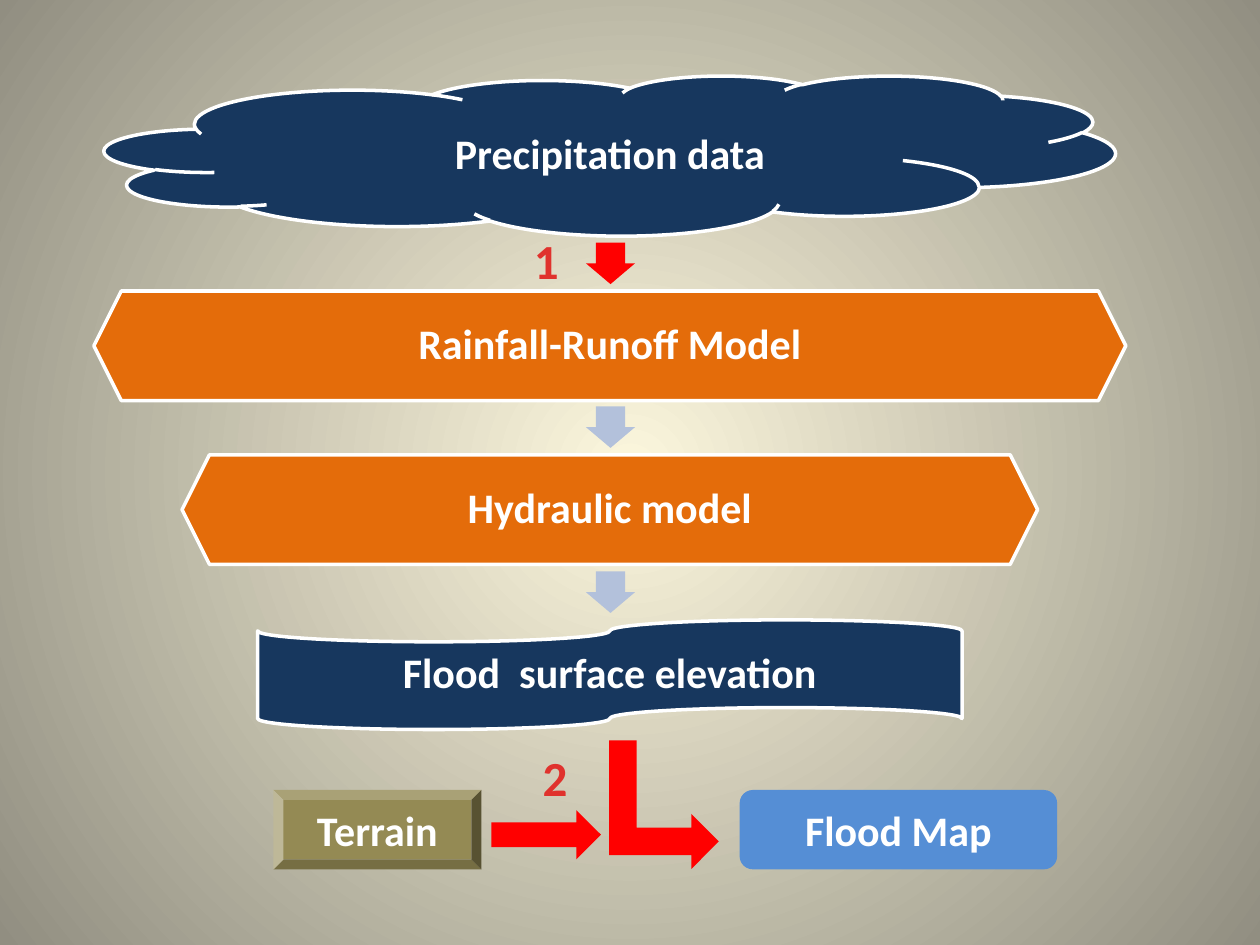
from lxml.etree import SubElement
from pptx import Presentation
from pptx.dml.color import RGBColor
from pptx.enum.shapes import MSO_SHAPE
from pptx.enum.text import MSO_ANCHOR, MSO_AUTO_SIZE, PP_ALIGN
from pptx.oxml.ns import qn
from pptx.util import Inches, Pt

NAVY, ORANGE, RED, PALE, WHITE = "17375E", "E46C0A", "FF0000", "B3C1DB", "FFFFFF"
CENTER_X = 4.84
STEP_HEIGHT = 0.87

# text, shape, top, width, height, fill, colour of the arrow leading in
STEPS = [
    ("Precipitation data", MSO_SHAPE.CLOUD, 0.6, 8.02, 1.27, NAVY, None),
    ("Rainfall-Runoff Model", MSO_SHAPE.HEXAGON, 2.31, 8.19, STEP_HEIGHT, ORANGE, RED),
    ("Hydraulic model", MSO_SHAPE.HEXAGON, 3.61, 6.79, STEP_HEIGHT, ORANGE, PALE),
    ("Flood  surface elevation", MSO_SHAPE.FLOWCHART_PUNCHED_TAPE, 4.92, 5.59,
     STEP_HEIGHT, NAVY, PALE),
]


def rgb(value):
    return RGBColor.from_string(value)


def set_gradient(fill, stops):
    fill.gradient()
    for stop, (position, color) in zip(fill.gradient_stops, stops):
        stop.position = position
        stop.color.rgb = rgb(color)


def set_background(slide, inner, outer):
    set_gradient(slide.background.fill, [(0, inner), (1, outer)])
    grad = slide.element.find(".//" + qn("a:gradFill"))
    grad.remove(grad.find(qn("a:lin")))
    circle = SubElement(grad, qn("a:path"), path="circle")
    SubElement(circle, qn("a:fillToRect"), l="50000", t="50000", r="50000", b="50000")


def set_text(sp, text, size=24, color=WHITE, line_spacing=None, inset=None):
    tf = sp.text_frame
    tf.word_wrap = True
    tf.vertical_anchor = MSO_ANCHOR.MIDDLE
    if inset is not None:
        tf.margin_left = tf.margin_right = Inches(inset)
        tf.margin_top = tf.margin_bottom = Inches(inset)
    p = tf.paragraphs[0]
    p.alignment = PP_ALIGN.CENTER
    p.line_spacing = line_spacing
    r = p.add_run()
    r.text = text
    r.font.name, r.font.size, r.font.bold = "Calibri", Pt(size), True
    r.font.color.rgb = rgb(color)
    return r


def add_box(slide, kind, left, top, width, height, fill, line=None, rotation=0):
    sp = slide.shapes.add_shape(kind, Inches(left), Inches(top),
                                Inches(width), Inches(height))
    sp.shadow.inherit = False
    sp.rotation = rotation
    sp.fill.solid()
    sp.fill.fore_color.rgb = rgb(fill)
    if line:
        sp.line.color.rgb = rgb(line)
        sp.line.width = Pt(2)
    else:
        sp.line.fill.background()
    return sp


def add_textbox(slide, left, top, width, height):
    return slide.shapes.add_textbox(Inches(left), Inches(top),
                                    Inches(width), Inches(height))


def add_step(slide, text, kind, top, width, height, fill, arrow):
    if arrow:
        sp = add_box(slide, MSO_SHAPE.RIGHT_ARROW, CENTER_X - 0.16, top - 0.415,
                     0.33, 0.39, arrow, rotation=90)
        sp.adjustments[0], sp.adjustments[1] = 0.6, 0.5
    left = CENTER_X - width / 2
    add_box(slide, kind, left, top, width, height, fill, line=WHITE)
    # The label is centred on the whole outline, not on the shape's text area
    label = add_textbox(slide, left, top, width, height)
    set_text(label, text, line_spacing=0.9, inset=0.1)


def add_number(slide, text, left, top):
    sp = add_textbox(slide, left, top, 0.55, 0.57)
    r = set_text(sp, text, size=28)
    sp.text_frame.vertical_anchor = MSO_ANCHOR.TOP
    sp.text_frame.auto_size = MSO_AUTO_SIZE.SHAPE_TO_FIT_TEXT
    set_gradient(r.font.fill, [(0.25, "E0322D"), (1, "A2201C")])
    r.font.fill.gradient_angle = 270
    r.font._element.set("spc", "50")


def main():
    prs = Presentation()
    prs.slide_width, prs.slide_height = Inches(10), Inches(7.5)
    slide = prs.slides.add_slide(prs.slide_layouts[6])
    set_background(slide, "FCF7DD", "918E81")

    # Model chain
    for step in STEPS:
        add_step(slide, *step)
    add_number(slide, "1", 4.06, 1.78)

    # Flood mapping
    terrain = add_box(slide, MSO_SHAPE.BEVEL, 2.17, 6.27, 1.65, 0.63, "948A54")
    set_text(terrain, "Terrain")
    flood_map = add_box(slide, MSO_SHAPE.ROUNDED_RECTANGLE, 5.87, 6.27, 2.52, 0.63, "558ED5")
    set_text(flood_map, "Flood Map")
    add_number(slide, "2", 4.13, 5.88)
    add_box(slide, MSO_SHAPE.BENT_UP_ARROW, 4.76, 5.95, 1.02, 0.87, RED, rotation=90)
    add_box(slide, MSO_SHAPE.RIGHT_ARROW, 3.9, 6.43, 0.87, 0.39, RED)

    prs.save("out.pptx")


if __name__ == "__main__":
    main()
